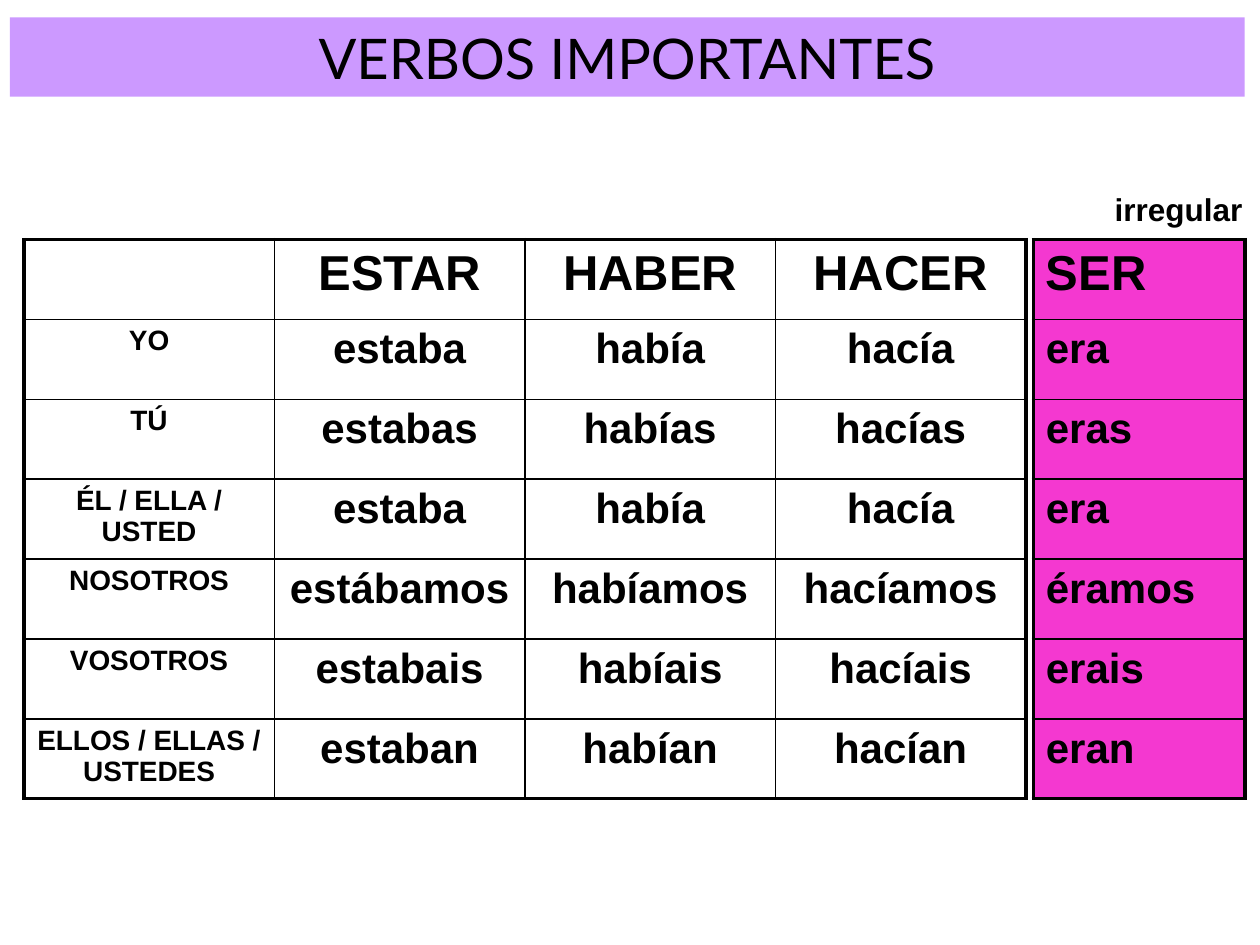
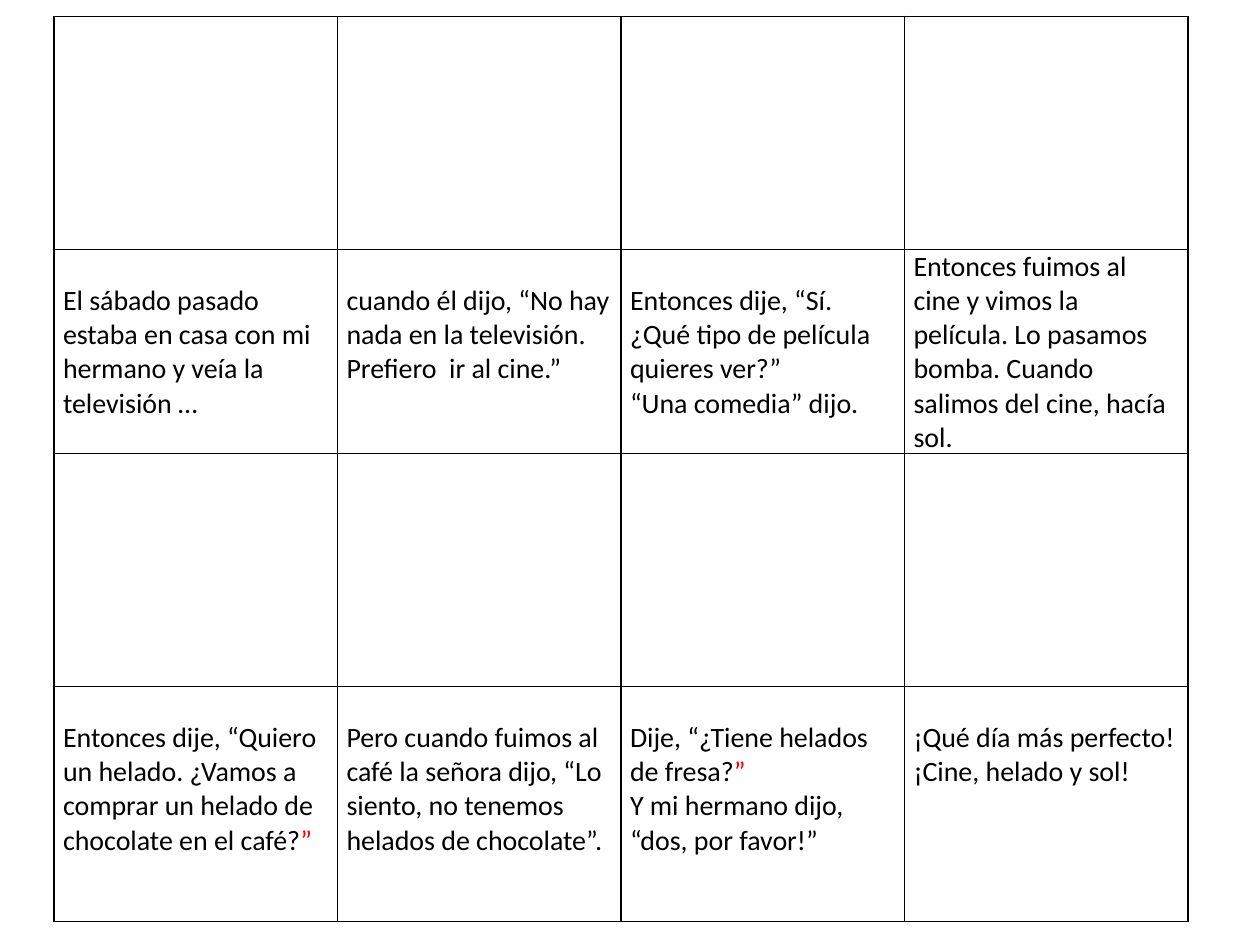
from dataclasses import dataclass

from lxml import etree
from pptx import Presentation
from pptx.dml.color import RGBColor
from pptx.enum.shapes import MSO_SHAPE
from pptx.enum.text import MSO_ANCHOR, PP_ALIGN
from pptx.oxml.ns import qn
from pptx.util import Cm, Pt

RECTANGLE = MSO_SHAPE.RECTANGLE
LEFT, CENTER = PP_ALIGN.LEFT, PP_ALIGN.CENTER
TOP, MIDDLE = MSO_ANCHOR.TOP, MSO_ANCHOR.MIDDLE


@dataclass(frozen=True)
class Theme:
    """Colours, fonts, type sizes and line widths of the deck."""
    ink: str = "000000"
    accent: str = "FF0000"
    band: str = "CC99FF"
    irregular: str = "F438D0"
    title_font: str = "Lato"
    verb_font: str = "Arial"
    story_font: str = "Calibri"
    title_size: float = 32
    heading_size: float = 28
    verb_size: float = 24
    label_size: float = 18
    pronoun_size: float = 16
    story_size: float = 16
    thin: float = 1
    thick: float = 2.25


THEME = Theme()

VERB_ROWS = [
    ["", "ESTAR", "HABER", "HACER"],
    ["YO", "estaba", "había", "hacía"],
    ["TÚ", "estabas", "habías", "hacías"],
    ["ÉL / ELLA / USTED", "estaba", "había", "hacía"],
    ["NOSOTROS", "estábamos", "habíamos", "hacíamos"],
    ["VOSOTROS", "estabais", "habíais", "hacíais"],
    ["ELLOS / ELLAS / USTEDES", "estaban", "habían", "hacían"],
]
SER_FORMS = ["SER", "era", "eras", "era", "éramos", "erais", "eran"]
STORY_ROWS = [
    [
        ["El sábado pasado estaba en casa con mi hermano y veía la televisión …"],
        ["cuando él dijo, “No hay nada en la televisión. Prefiero  ir al cine.”"],
        ["Entonces dije, “Sí. ¿Qué tipo de película quieres ver?”", "“Una comedia” dijo."],
        ["Entonces fuimos al cine y vimos la película. Lo pasamos bomba. "
         "Cuando salimos del cine, hacía sol."],
    ],
    [
        [("Entonces dije, “Quiero un helado. ¿Vamos a comprar un helado de "
          "chocolate en el café?", "”")],
        ["Pero cuando fuimos al café la señora dijo, “Lo siento, no tenemos "
         "helados de chocolate”."],
        [("Dije, “¿Tiene helados de fresa?", "”"), "Y mi hermano dijo, “dos, por favor!”"],
        ["¡Qué día más perfecto! ¡Cine, helado y sol!"],
    ],
]


def write(frame, paragraphs, *, font, size, bold=False, align=LEFT):
    """Fill a frame; in a paragraph given as a pair, the second part is accented."""
    for index, parts in enumerate(paragraphs):
        para = frame.paragraphs[0] if index == 0 else frame.add_paragraph()
        para.alignment = align
        pair = (parts,) if isinstance(parts, str) else parts
        for text, color in zip(pair, (THEME.ink, THEME.accent)):
            span = para.add_run()
            span.text = text
            span.font.name = font
            span.font.size = Pt(size)
            span.font.bold = bold
            span.font.color.rgb = RGBColor.from_string(color)


def draw_borders(cell, widths):
    """Draw the left, right, top and bottom borders of a cell."""
    properties = cell._tc.get_or_add_tcPr()
    for index, (side, width) in enumerate(zip("LRTB", widths)):
        line = etree.Element(qn(f"a:ln{side}"), w=str(Pt(width)))
        fill = etree.SubElement(line, qn("a:solidFill"))
        etree.SubElement(fill, qn("a:srgbClr"), val=THEME.ink)
        properties.insert(index, line)


def add_grid(page, box, columns, heights, *, fill=None, outline=THEME.thin):
    """Add a ruled table with equal columns in a (left, top, width) box."""
    left, top, width = box
    rows = len(heights)
    table = page.shapes.add_table(
        rows, columns, Cm(left), Cm(top), Cm(width), Cm(sum(heights))).table
    table.first_row = table.horz_banding = False
    for column in table.columns:
        column.width = Cm(width / columns)
    for row, height in enumerate(heights):
        table.rows[row].height = Cm(height)
        for column in range(columns):
            cell = table.cell(row, column)
            if fill:
                cell.fill.solid()
                cell.fill.fore_color.rgb = RGBColor.from_string(fill)
            else:
                cell.fill.background()
            edges = (column == 0, column == columns - 1, row == 0, row == rows - 1)
            draw_borders(cell, [outline if edge else THEME.thin for edge in edges])
    return table


def add_title_band(page, box, text):
    """Add the coloured title band."""
    band = page.shapes.add_shape(RECTANGLE, *map(Cm, box))
    band.shadow.inherit = False
    band.fill.solid()
    band.fill.fore_color.rgb = RGBColor.from_string(THEME.band)
    band.line.fill.background()
    band.text_frame.vertical_anchor = MIDDLE
    write(band.text_frame, [text], font=THEME.title_font, size=THEME.title_size,
          align=CENTER)


def add_label(page, box, text):
    """Add a bold one-line label."""
    frame = page.shapes.add_textbox(*map(Cm, box)).text_frame
    frame.word_wrap = False
    write(frame, [text], font=THEME.verb_font, size=THEME.label_size, bold=True)


def add_conjugation(page, box, rows, *, pronouns=False, fill=None, align=CENTER):
    """Add a conjugation table with verbs as headings and optional pronouns."""
    left, top, width, height = box
    table = add_grid(page, (left, top, width), len(rows[0]),
                     [height / len(rows)] * len(rows), fill=fill, outline=THEME.thick)
    for row, forms in enumerate(rows):
        for column, form in enumerate(forms):
            if not form:
                continue
            size = THEME.heading_size if row == 0 else THEME.verb_size
            if pronouns and column == 0:
                size = THEME.pronoun_size
            write(table.cell(row, column).text_frame, [form], font=THEME.verb_font,
                  size=size, bold=True, align=align)


def build_verbs_page(page):
    """Build the page of important verbs."""
    top, height = 4.83, 11.27
    add_conjugation(page, (0.48, top, 20.2, height), VERB_ROWS, pronouns=True)
    add_conjugation(page, (20.83, top, 4.27, height), [[form] for form in SER_FORMS],
                    fill=THEME.irregular, align=LEFT)
    add_title_band(page, (0.2, 0.35, 24.89, 1.6), "VERBOS IMPORTANTES")
    add_label(page, (22.22, top - 1.12, 3.1, 1.02), "irregular")


def build_story_page(page):
    """Build the storyboard, with empty drawing rows above the text rows."""
    table = add_grid(page, (1.09, 0.33, 22.86), 4, [4.7, 4.11, 4.7, 4.74])
    for story_row, panels in enumerate(STORY_ROWS):
        for column, paragraphs in enumerate(panels):
            cell = table.cell(2 * story_row + 1, column)
            cell.vertical_anchor = TOP
            cell.margin_left = cell.margin_right = Cm(0.18)
            starts_high = story_row == 0 and column == 3
            cell.margin_top = Cm(0 if starts_high else 0.69)
            cell.margin_bottom = 0
            write(cell.text_frame, paragraphs, font=THEME.story_font,
                  size=THEME.story_size)


def main():
    """Build and save the deck."""
    deck = Presentation()
    deck.slide_width, deck.slide_height = Cm(25.4), Cm(19.05)
    for build_page in (build_verbs_page, build_story_page):
        build_page(deck.slides.add_slide(deck.slide_layouts[6]))
    deck.save("out.pptx")


if __name__ == "__main__":
    main()
